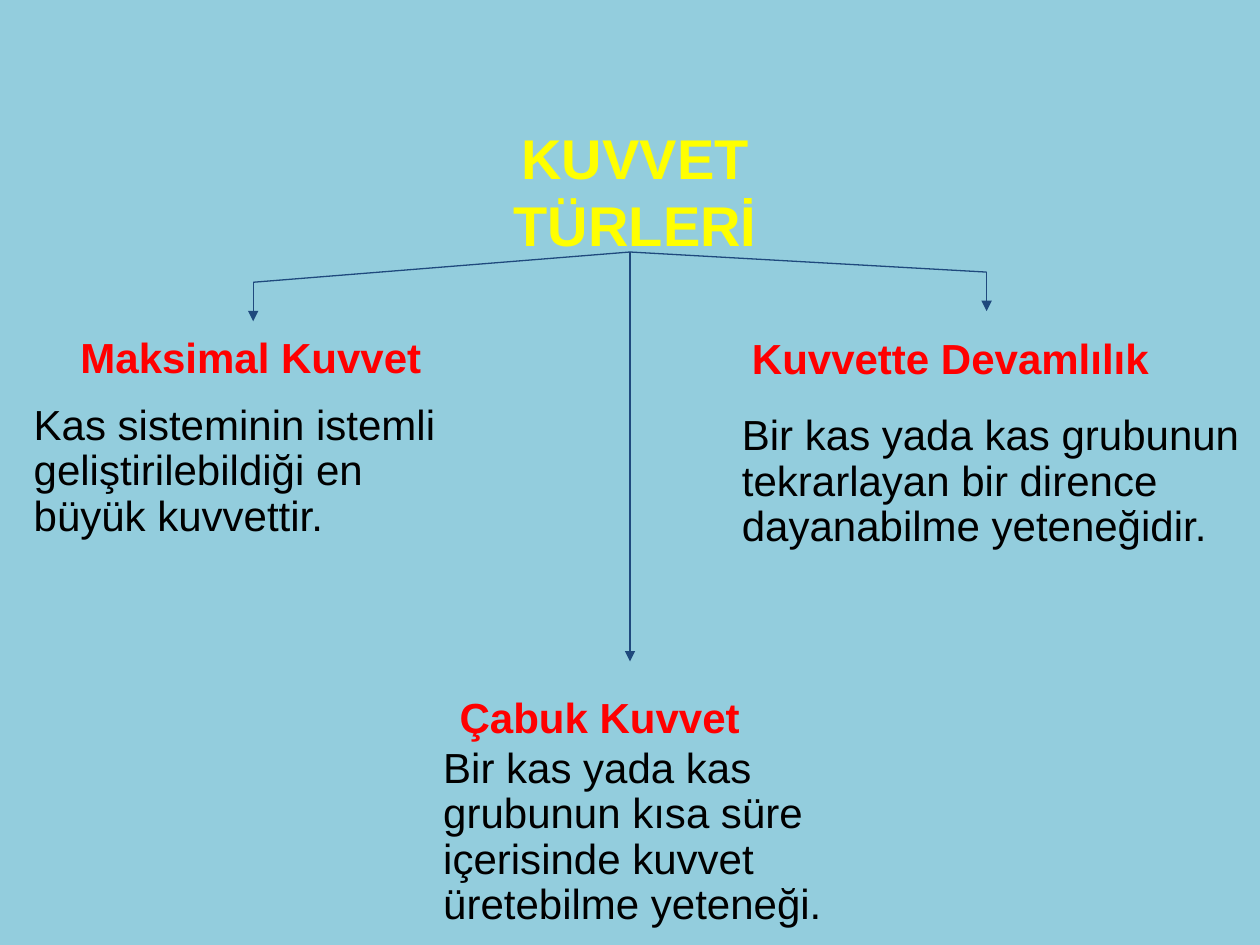
from pptx import Presentation
from pptx.dml.color import RGBColor
from pptx.enum.shapes import MSO_CONNECTOR
from pptx.enum.text import MSO_ANCHOR, MSO_AUTO_SIZE, PP_ALIGN
from pptx.oxml.ns import qn
from pptx.util import Pt
from lxml import etree

STRAIGHT = MSO_CONNECTOR.STRAIGHT
TOP = MSO_ANCHOR.TOP
GROW = MSO_AUTO_SIZE.SHAPE_TO_FIT_TEXT
FIXED = MSO_AUTO_SIZE.NONE
LEFT, CENTER = PP_ALIGN.LEFT, PP_ALIGN.CENTER

TITLE_ONLY = 5
ARROW_DROP = 22.3


def color(value):
    return RGBColor.from_string(value)


def write(frame, text, *, size=24, fill="000000", bold=False, align=LEFT,
          spacing=1.0, wrap=True, fit=GROW):
    frame.word_wrap = wrap
    frame.auto_size = fit
    frame.vertical_anchor = TOP
    paragraph = frame.paragraphs[0]
    paragraph.alignment = align
    paragraph.line_spacing = spacing
    run = paragraph.add_run()
    run.text = text
    run.font.name = "Arial"
    run.font.size = Pt(size)
    run.font.bold = bold
    run.font.color.rgb = color(fill)


class Diagram:
    background = "93CDDD"
    title_color = "FFFF00"
    heading_color = "FF0000"
    line_color = "1F497D"

    def __init__(self, presentation):
        self.slide = presentation.slides.add_slide(
            presentation.slide_layouts[TITLE_ONLY])
        fill = self.slide.background.fill
        fill.solid()
        fill.fore_color.rgb = color(self.background)

    def title(self, text, left, top, width, height):
        title = self.slide.shapes.title
        title.left, title.top = Pt(left), Pt(top)
        title.width, title.height = Pt(width), Pt(height)
        frame = title.text_frame
        frame.margin_top = frame.margin_bottom = 0
        write(frame, text, size=32, fill=self.title_color, bold=True,
              align=CENTER, wrap=False, fit=FIXED)

    def textbox(self, text, left, top, width, height, **style):
        box = self.slide.shapes.add_textbox(
            Pt(left), Pt(top), Pt(width), Pt(height))
        write(box.text_frame, text, **style)

    def heading(self, text, left, top, width):
        self.textbox(text, left, top, width, 36.7, fill=self.heading_color,
                     bold=True, wrap=False)

    def definition(self, text, left, top, width, height):
        self.textbox(text, left, top, width, height, spacing=0.9)

    def line(self, start, end, weight=0.75, arrow=False):
        connector = self.slide.shapes.add_connector(
            STRAIGHT, *(Pt(value) for value in (*start, *end)))
        connector.line.color.rgb = color(self.line_color)
        connector.line.width = Pt(weight)
        if arrow:
            outline = connector.line._get_or_add_ln()
            etree.SubElement(outline, qn("a:tailEnd"), type="triangle")
        etree.SubElement(connector._element.spPr, qn("a:effectLst"))


def main():
    presentation = Presentation()
    presentation.slide_width, presentation.slide_height = Pt(720), Pt(540)
    diagram = Diagram(presentation)

    diagram.title("KUVVET TÜRLERİ", 252, 70.5, 222, 67.5)

    root = (360, 144)
    for x, y in ((144.7, 161.3), (563.8, 155.5)):
        diagram.line(root, (x, y))
        diagram.line((x, y), (x, y + ARROW_DROP), arrow=True)
    diagram.line(root, (360, 378), weight=1, arrow=True)

    strengths = (
        ("Maksimal Kuvvet", (38.9, 185.8, 211),
         "Kas sisteminin istemli geliştirilebildiği en büyük kuvvettir.",
         (12.2, 227.5, 257, 85.7)),
        ("Kuvvette Devamlılık", (422.6, 186.5, 243.4),
         "Bir kas yada kas grubunun tekrarlayan bir dirence "
         "dayanabilme yeteneğidir.",
         (416.9, 233.3, 299.5, 85.7)),
        ("Çabuk Kuvvet", (255.6, 391.7, 175.7),
         "Bir kas yada kas grubunun kısa süre içerisinde kuvvet "
         "üretebilme yeteneği.",
         (246.2, 423.4, 289.4, 112.3)),
    )
    for name, name_place, meaning, meaning_place in strengths:
        diagram.heading(name, *name_place)
        diagram.definition(meaning, *meaning_place)

    presentation.save("out.pptx")


if __name__ == "__main__":
    main()
